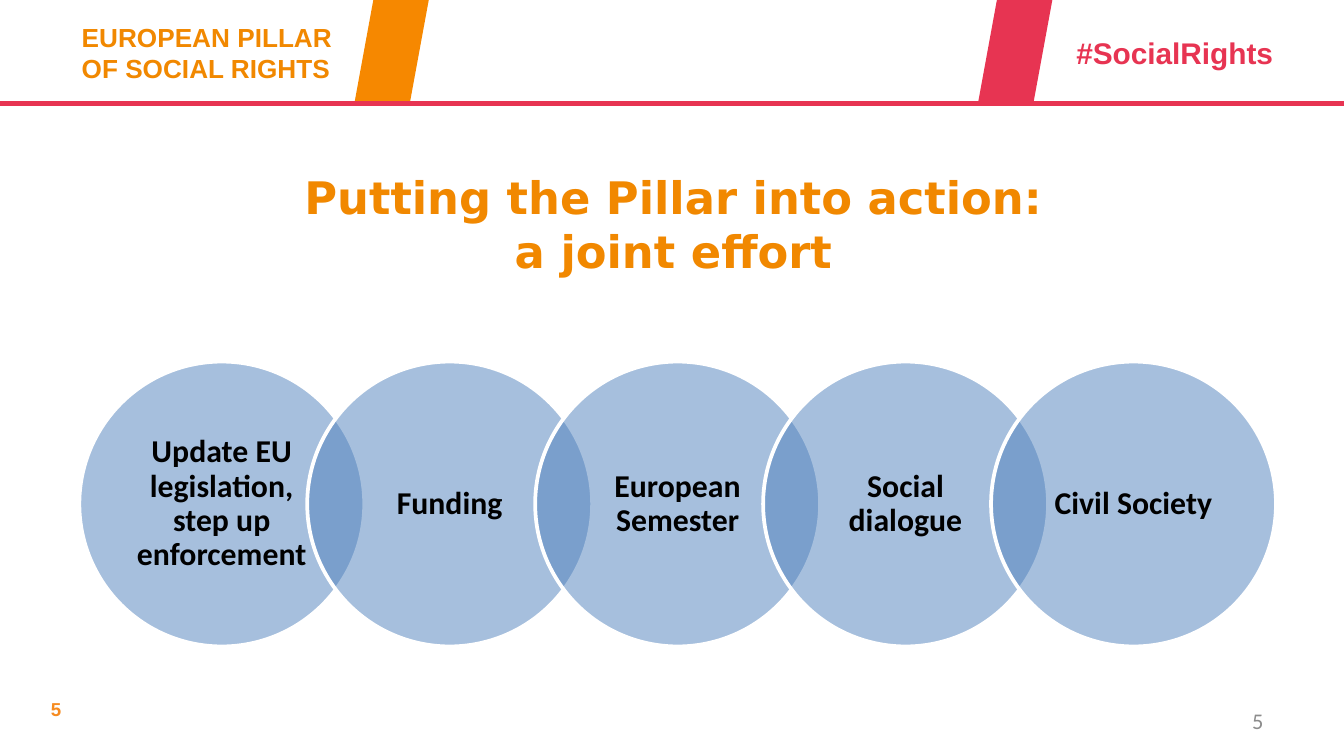
"""Build the slide on putting the European Pillar of Social Rights into action."""
import dataclasses

import lxml.etree
import pptx
import pptx.dml.color
import pptx.enum.shapes
import pptx.enum.text
import pptx.oxml.ns
import pptx.util

Inches = pptx.util.Inches
Align = pptx.enum.text.PP_ALIGN
Anchor = pptx.enum.text.MSO_ANCHOR
Shape = pptx.enum.shapes.MSO_SHAPE


@dataclasses.dataclass(frozen=True)
class Theme:
    orange: str = "F18800"
    bar_orange: str = "F68800"
    number_orange: str = "F68B20"
    red: str = "E73452"
    blue: str = "4F81BD"
    white: str = "FFFFFF"
    black: str = "000000"
    grey: str = "8C8C8C"
    header_font: str = "Arial"
    title_font: str = "DejaVu Sans"
    body_font: str = "Calibri"
    title_size: int = 24
    label_size: int = 17
    hashtag_size: int = 16
    header_size: int = 14
    page_size: int = 12
    number_size: int = 10


theme = Theme()


def rgb(value):
    return pptx.dml.color.RGBColor.from_string(value)


def write(box, text, font, size, color, bold=True, align=Align.LEFT, anchor=Anchor.TOP):
    frame = box.text_frame
    frame.word_wrap = True
    frame.auto_size = pptx.enum.text.MSO_AUTO_SIZE.NONE
    frame.vertical_anchor = anchor
    para = frame.paragraphs[0]
    para.text = text
    para.alignment = align
    para.font.name = font
    para.font.size = pptx.util.Pt(size)
    para.font.bold = bold
    para.font.color.rgb = rgb(color)
    return para


deck = pptx.Presentation()
deck.slide_width = Inches(10)
deck.slide_height = Inches(10 * 9 / 16)
page = deck.slides.add_slide(deck.slide_layouts[5])
shapes = page.shapes

headers = [
    (0.28, 5.14, 2.18, 0.27, "5", theme.number_size, theme.number_orange),
    (0.51, 0.11, 2.54, 0.57, "EUROPEAN PILLAR \nOF SOCIAL RIGHTS", theme.header_size, theme.orange),
    (7.91, 0.21, 1.73, 0.37, "#SocialRights", theme.hashtag_size, theme.red),
]
for left, top, width, height, text, size, color in headers:
    box = shapes.add_textbox(Inches(left), Inches(top), Inches(width), Inches(height))
    write(box, text, theme.header_font, size, color)

rule = shapes.add_connector(
    pptx.enum.shapes.MSO_CONNECTOR.STRAIGHT, 0, Inches(0.77), deck.slide_width, Inches(0.77)
)
rule.line.color.rgb = rgb(theme.red)
rule.line.width = pptx.util.Pt(2.25)
lxml.etree.SubElement(rule.element.spPr, pptx.oxml.ns.qn("a:effectLst"))

for left, color in [(2.64, theme.bar_orange), (7.28, theme.red)]:
    bar = shapes.add_shape(Shape.PARALLELOGRAM, Inches(left), 0, Inches(0.55), Inches(0.75))
    bar.shadow.inherit = False
    bar.fill.solid()
    bar.fill.fore_color.rgb = rgb(color)
    bar.line.fill.background()

title = shapes.title
title.left, title.top = Inches(0.51), Inches(1.28)
title.width, title.height = Inches(9), Inches(0.77)
write(title, "Putting the Pillar into action:\na joint effort", theme.title_font,
      theme.title_size, theme.orange, align=Align.CENTER, anchor=Anchor.MIDDLE)

page_number = shapes.add_textbox(Inches(7.17), Inches(5.21), Inches(2.33), Inches(0.3))
write(page_number, "5", theme.body_font, theme.page_size, theme.grey,
      bold=False, align=Align.RIGHT, anchor=Anchor.MIDDLE)

efforts = [
    "Update EU legislation, step up enforcement",
    "Funding",
    "European Semester",
    "Social dialogue",
    "Civil Society",
]
diameter = 2.12
pitch = 0.8 * diameter
label_side = 1.5
inset = (diameter - label_side) / 2
for index, effort in enumerate(efforts):
    left, top = 0.59 + index * pitch, 2.69
    circle = shapes.add_shape(
        Shape.OVAL, Inches(left), Inches(top), Inches(diameter), Inches(diameter)
    )
    circle.shadow.inherit = False
    circle.fill.solid()
    circle.fill.fore_color.rgb = rgb(theme.blue)
    fill_color = circle.element.spPr.find(".//" + pptx.oxml.ns.qn("a:srgbClr"))
    lxml.etree.SubElement(fill_color, pptx.oxml.ns.qn("a:alpha"), val="50000")
    circle.line.color.rgb = rgb(theme.white)
    circle.line.width = pptx.util.Pt(2)

    label = shapes.add_textbox(
        Inches(left + inset), Inches(top + inset), Inches(label_side), Inches(label_side)
    )
    frame = label.text_frame
    frame.margin_left = frame.margin_right = Inches(0.11)
    frame.margin_top = frame.margin_bottom = Inches(0.02)
    para = write(label, effort, theme.body_font, theme.label_size, theme.black,
                 align=Align.CENTER, anchor=Anchor.MIDDLE)
    para.line_spacing = 0.9

deck.save("out.pptx")
